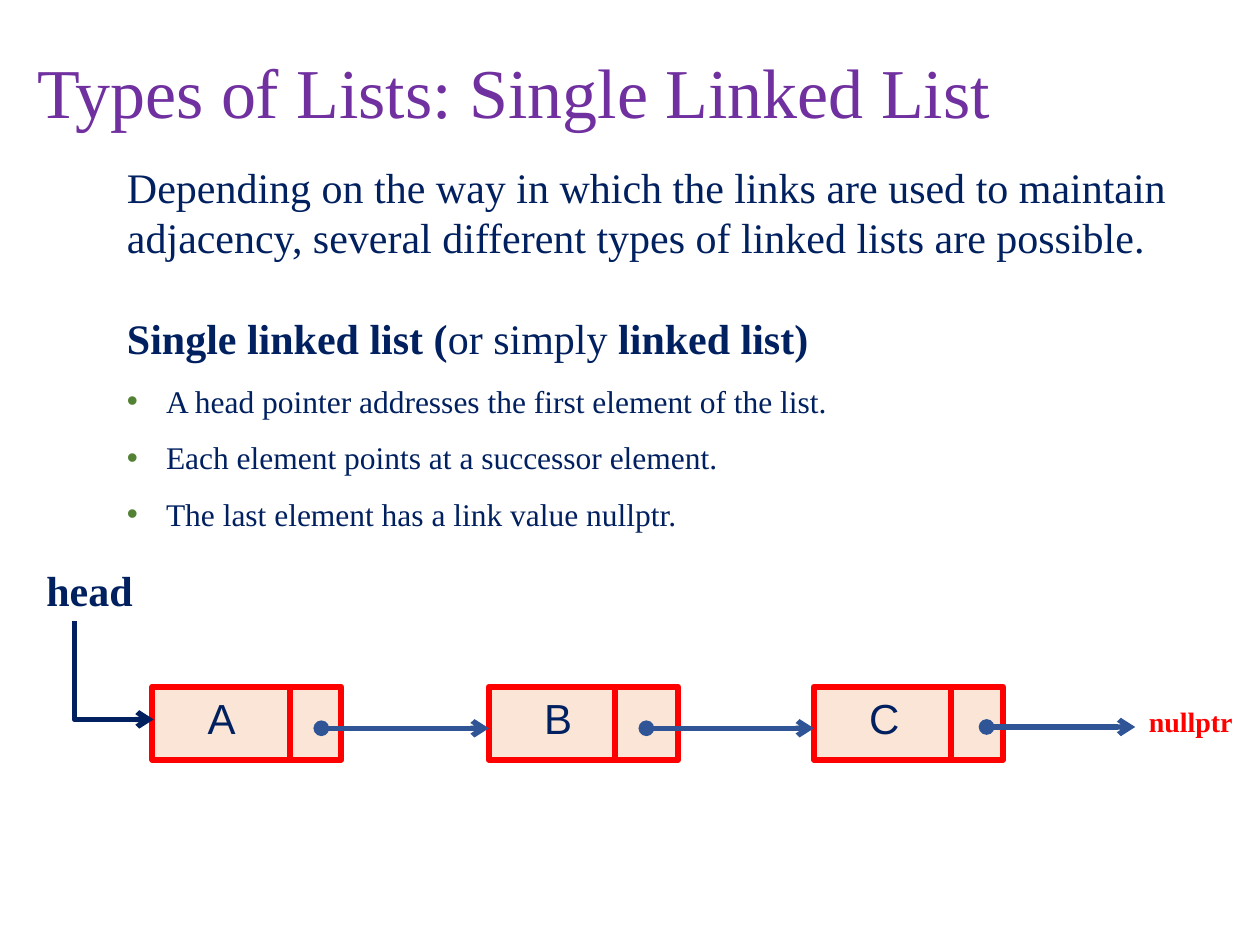
from lxml import etree
from pptx import Presentation
from pptx.dml.color import RGBColor
from pptx.enum.shapes import MSO_CONNECTOR, MSO_SHAPE
from pptx.enum.text import MSO_ANCHOR
from pptx.oxml.ns import qn
from pptx.util import Inches, Pt

LINE, ELBOW = MSO_CONNECTOR.STRAIGHT, MSO_CONNECTOR.ELBOW
RECT = MSO_SHAPE.RECTANGLE
TOP, MIDDLE = MSO_ANCHOR.TOP, MSO_ANCHOR.MIDDLE
SERIF, SANS = "Times New Roman", "Arial"
NAVY, RED, BLUE, PEACH = "002060", "FF0000", "2F5597", "FBE5D6"
PURPLE, GREEN = "7030A0", "548235"
COLS, ROWS = 100, 75


def rgb(code):
    """Turn a hex string into a colour."""
    return RGBColor.from_string(code)


class Deck:
    """Hold the style and the current slide, measured on a grid of cells."""

    def __init__(self):
        """Start a deck with one blank slide."""
        self.prs = Presentation()
        self.prs.slide_width, self.prs.slide_height = Inches(10), Inches(7.5)
        self.cell_w = self.prs.slide_width / COLS
        self.cell_h = self.prs.slide_height / ROWS
        self.slide = self.prs.slides.add_slide(self.prs.slide_layouts[6])
        self.shapes = self.slide.shapes

    def span(self, left, top, right, low):
        """Convert two pairs of columns and rows to lengths."""
        return (round(left * self.cell_w), round(top * self.cell_h),
                round(right * self.cell_w), round(low * self.cell_h))

    def frame(self, *area, anchor=TOP):
        """Add an empty text box and return its text frame."""
        frame = self.shapes.add_textbox(*self.span(*area)).text_frame
        frame.word_wrap = True
        frame.vertical_anchor = anchor
        return frame

    def fill(self, para, runs, size, color=NAVY, font=SERIF):
        """Fill a paragraph with pairs of text and weight."""
        for text, bold in runs:
            run = para.add_run()
            run.text = text
            run.font.size, run.font.bold, run.font.name = Pt(size), bold, font
            run.font.color.rgb = rgb(color)

    def label(self, area, text, size, color=NAVY, font=SERIF, bold=False):
        """Add a text box with one run."""
        para = self.frame(*area).paragraphs[0]
        self.fill(para, [(text, bold)], size, color, font)

    def bullet(self, para):
        """Give a paragraph a green dot and a hanging indent."""
        props = para._p.get_or_add_pPr()
        props.set("marL", str(Inches(0.31)))
        props.set("indent", str(-Inches(0.31)))
        tint = etree.SubElement(props, qn("a:buClr"))
        etree.SubElement(tint, qn("a:srgbClr"), val=GREEN)
        etree.SubElement(props, qn("a:buFont"), typeface=SANS)
        etree.SubElement(props, qn("a:buChar"), char="•")

    def box(self, *area):
        """Add a node rectangle."""
        shape = self.shapes.add_shape(RECT, *self.span(*area))
        shape.shadow.inherit = False
        shape.fill.solid()
        shape.fill.fore_color.rgb = rgb(PEACH)
        shape.line.color.rgb = rgb(RED)
        shape.line.width = Pt(3.5)

    def line(self, *ends, color=BLUE, width=3, kind=LINE, head=None, tail=None):
        """Add a connector with optional end marks."""
        link = self.shapes.add_connector(kind, *self.span(*ends))
        link.line.color.rgb = rgb(color)
        link.line.width = Pt(width)
        props = link._element.spPr
        for tag, mark in (("a:headEnd", head), ("a:tailEnd", tail)):
            if mark:
                etree.SubElement(props.find(qn("a:ln")), qn(tag), type=mark)
        etree.SubElement(props, qn("a:effectLst"))
        return link

    def bend(self, left, top, right, low):
        """Add an arrow that runs down and then right."""
        mid_x, mid_y = (left + right) / 2, (top + low) / 2
        half_w, half_h = (low - top) / 2, (right - left) / 2
        link = self.line(mid_x + half_w, mid_y - half_h, mid_x - half_w,
                         mid_y + half_h, color=NAVY, kind=ELBOW, tail="arrow")
        props = link._element.spPr
        props.find(qn("a:xfrm")).set("rot", str(270 * 60000))
        props.find(qn("a:prstGeom")).set("prst", "bentConnector2")


def main():
    """Build the slide."""
    deck = Deck()
    title = deck.frame(2, 2.1, 95.3, 11, anchor=MIDDLE).paragraphs[0]
    title.line_spacing = 0.9
    deck.fill(title, [("Types of Lists: Single Linked List", False)], 40, PURPLE)

    body = deck.frame(9.1, 12.3, 85, 38.9)
    deck.fill(body.paragraphs[0], [(
        "Depending on the way in which the links are used to maintain "
        "adjacency, several different types of linked lists are possible.",
        False)], 24)
    topic = body.add_paragraph()
    topic.space_before = Pt(28.8)
    deck.fill(topic, [("Single linked list (", True), ("or simply ", False),
                      ("linked list)", True)], 24)
    for text in ("A head pointer addresses the first element of the list.",
                 "Each element points at a successor element.",
                 "The last element has a link value nullptr."):
        point = body.add_paragraph()
        point.line_spacing = 1.5
        deck.bullet(point)
        deck.fill(point, [(text, False)], 18)

    top, high = 54.5, 5.8
    nodes = (("A", 12.1, 23, 25.5, 38.8, 57.8),
             ("B", 38.8, 48.8, 51.3, 64.6, 57.8),
             ("C", 64.6, 75.5, 78.3, 90.1, 57.7))
    for name, left, split, *_ in nodes:
        deck.box(left, top, 15, high)
        deck.line(split, top, split, top + high, color=RED, width=3.25)
        deck.label((left + 3.4, top, 6.7, 5), name, 24, font=SANS)
    for *_, start, end, row in nodes:
        deck.line(start, row, end, row, head="oval", tail="arrow")

    deck.label((90.2, 55.4, 9.4, 3.7), "nullptr", 16, RED, bold=True)
    deck.bend(5.9, 49.3, 12.2, 57.1)
    deck.label((2.7, 44.3, 9.4, 5), "head", 24, bold=True)
    deck.prs.save("out.pptx")


if __name__ == "__main__":
    main()
